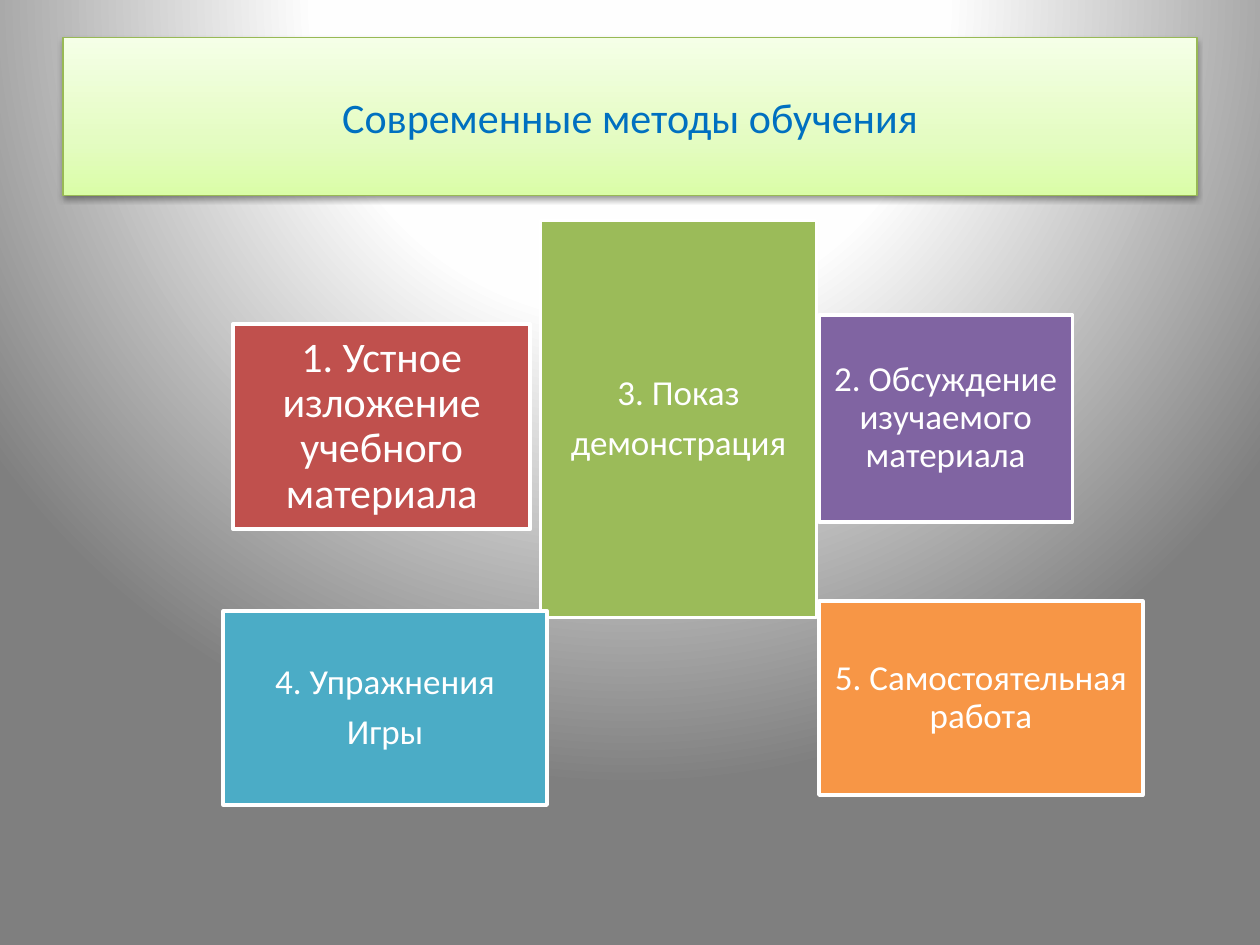
from lxml.etree import SubElement
from pptx import Presentation
from pptx.dml.color import RGBColor
from pptx.enum.shapes import MSO_SHAPE
from pptx.enum.text import MSO_ANCHOR, PP_ALIGN
from pptx.oxml.ns import qn
from pptx.util import Cm, Pt

# Colours
WHITE = RGBColor(0xFF, 0xFF, 0xFF)
BLACK = RGBColor(0x00, 0x00, 0x00)
BLUE = RGBColor(0x00, 0x70, 0xC0)
TITLE_EDGE = RGBColor(0x98, 0xB9, 0x55)
RED = RGBColor(0xC0, 0x50, 0x4D)
GREEN = RGBColor(0x9B, 0xBB, 0x59)
PURPLE = RGBColor(0x80, 0x64, 0xA2)
TEAL = RGBColor(0x4B, 0xAC, 0xC6)
ORANGE = RGBColor(0xF7, 0x96, 0x46)
BACKGROUND_STOPS = [(0, WHITE), (40, RGBColor(0xFE, 0xFE, 0xFE)),
                    (100, RGBColor(0x7F, 0x7F, 0x7F))]
TITLE_STOPS = [(0, RGBColor(0xDA, 0xFD, 0xA7)), (35, RGBColor(0xE4, 0xFC, 0xC2)),
               (100, RGBColor(0xF5, 0xFF, 0xE7))]

# Content: paragraphs, font size, fill, (left, top, width, height) in cm
TITLE = "Современные методы обучения"
TITLE_BOX = (1.27, 0.76, 22.86, 3.18)
RIGHT_COLUMN = 16.51
METHODS = [
    (["1. Устное изложение учебного материала"], 24, RED, (4.7, 6.53, 5.99, 4.14)),
    (["3. Показ", "демонстрация"], 20, GREEN, (10.9, 4.45, 5.56, 8)),
    (["2. Обсуждение изучаемого материала"], 20, PURPLE,
     (RIGHT_COLUMN, 6.35, 5.11, 4.17)),
    (["4. Упражнения", "Игры"], 20, TEAL, (4.5, 12.32, 6.53, 3.91)),
    (["5. Самостоятельная работа"], 20, ORANGE, (RIGHT_COLUMN, 12.12, 6.53, 3.91)),
]


def add_color(parent, color, **children):
    clr = SubElement(parent, qn("a:srgbClr"), val=str(color))
    for name, val in children.items():
        SubElement(clr, qn(f"a:{name}"), val=str(val))


def set_gradient(fill, parent, stops):
    """Give the fill its colour stops and return the element for its direction."""
    fill.gradient()
    grad = next(parent.iter(qn("a:gradFill")))
    grad.clear()
    grad.set("rotWithShape", "1")
    gs_list = SubElement(grad, qn("a:gsLst"))
    for pos, color in stops:
        add_color(SubElement(gs_list, qn("a:gs"), pos=str(pos * 1000)), color)
    return grad


def add_box(slide, box, line_color, line_width):
    s = slide.shapes.add_shape(MSO_SHAPE.RECTANGLE, *map(Cm, box))
    s.line.color.rgb = line_color
    s.line.width = Pt(line_width)
    s.shadow.inherit = False
    return s


def write_text(s, paragraphs, size=20, color=WHITE, margins=(0.2, 0.2),
               line_spacing=0.9, space_after=0):
    tf = s.text_frame
    tf.word_wrap = True
    tf.vertical_anchor = MSO_ANCHOR.MIDDLE
    tf.margin_left = tf.margin_right = Cm(margins[0])
    tf.margin_top = tf.margin_bottom = Cm(margins[1])
    for i, text in enumerate(paragraphs):
        p = tf.paragraphs[0] if i == 0 else tf.add_paragraph()
        p.alignment = PP_ALIGN.CENTER
        p.line_spacing = line_spacing
        p.space_after = Pt(space_after)
        r = p.add_run()
        r.text = text
        r.font.name = "Calibri"
        r.font.size = Pt(size)
        r.font.color.rgb = color


prs = Presentation()
prs.slide_width, prs.slide_height = Cm(25.4), Cm(19.05)
slide = prs.slides.add_slide(prs.slide_layouts[6])

# Background: circular gradient centred above the slide
grad = set_gradient(slide.background.fill, slide.element, BACKGROUND_STOPS)
path = SubElement(grad, qn("a:path"), path="circle")
SubElement(path, qn("a:fillToRect"), l="50000", t="-80000", r="50000", b="180000")

# Title bar with upward gradient and soft shadow
s = add_box(slide, TITLE_BOX, TITLE_EDGE, 0.75)
grad = set_gradient(s.fill, s.element.spPr, TITLE_STOPS)
SubElement(grad, qn("a:lin"), ang=str(270 * 60000), scaled="0")
effects = s.element.spPr.find(qn("a:effectLst"))
shadow = SubElement(effects, qn("a:outerShdw"), blurRad=str(Pt(3.1)),
                    dist=str(Pt(1.6)), dir=str(90 * 60000), rotWithShape="0")
add_color(shadow, BLACK, alpha=38000)
write_text(s, [TITLE], size=24, color=BLUE, margins=(0.25, 0.13), line_spacing=1.0)

# Method boxes
for paragraphs, size, color, box in METHODS:
    s = add_box(slide, box, WHITE, 2)
    s.fill.solid()
    s.fill.fore_color.rgb = color
    write_text(s, paragraphs, size=size, margins=(size / 100, size / 100),
               space_after=size * 0.35)

prs.save("out.pptx")
